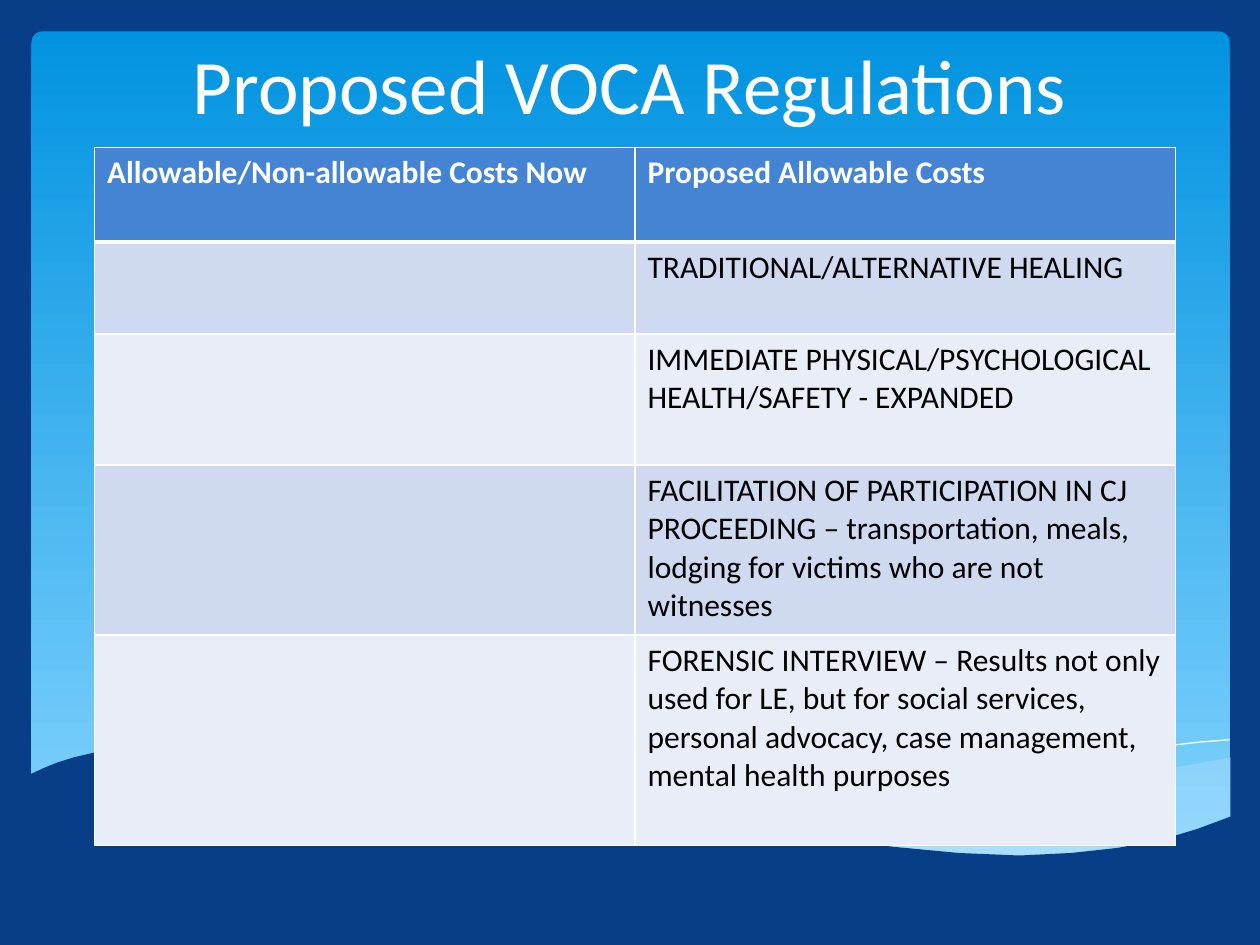
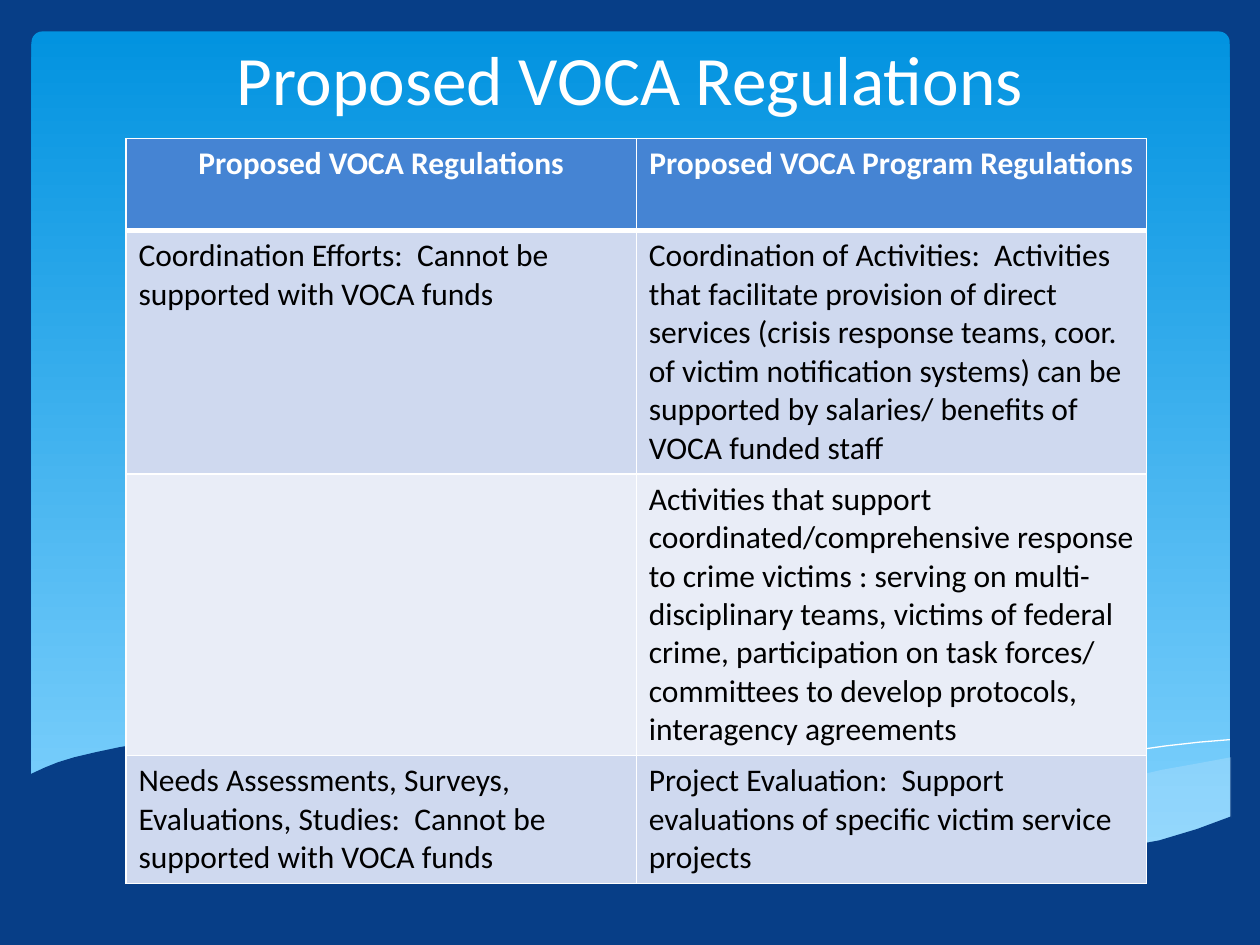
import pptx
import pptx.dml.color
import pptx.enum.shapes
import pptx.enum.text
import pptx.oxml
import pptx.oxml.ns
import pptx.util
from pptx.util import Inches

# Shared look
FONT = "Calibri"
NAVY, WHITE, BLACK = "073E87", "FFFFFF", "000000"
SKY_TOP, SKY_BOTTOM, MIST = "0293E0", "83D3FE", "C6E7FC"
HEADER_BLUE, BAND_DARK, BAND_LIGHT = "4584D3", "CFD9EF", "E9EDF7"
TITLE = "Proposed VOCA Regulations"

# Wave outlines, in inches
RIGHT_SWELL = [
    (9.77, 6.01), (9.5, 6.06), (9.22, 6.11), (8.92, 6.18), (8.62, 6.25),
    (8.06, 6.39), (7.54, 6.5), (7.07, 6.59), (6.62, 6.67), (6.92, 6.71),
    (7.33, 6.76), (7.7, 6.79), (8.04, 6.8), (8.36, 6.79), (8.64, 6.77),
    (8.9, 6.74), (9.14, 6.69), (9.37, 6.63), (9.64, 6.54), (9.77, 6.49)]
MIDDLE_SWELL = [
    (8.94, 6.75), (8.67, 6.71), (8.08, 6.62), (7.42, 6.49), (6.69, 6.33),
    (6.3, 6.24), (5.84, 6.13), (5.42, 6.04), (5.02, 5.98), (4.65, 5.93),
    (4.2, 5.89), (3.8, 5.87), (3.45, 5.88), (3.14, 5.9), (2.87, 5.93),
    (3.23, 5.98), (3.63, 6.04), (4.05, 6.13), (4.5, 6.24), (5.3, 6.42),
    (6.02, 6.57), (6.51, 6.66), (6.96, 6.72), (7.37, 6.77), (7.74, 6.79),
    (8.08, 6.8), (8.39, 6.8), (8.68, 6.78), (8.94, 6.75)]
FALLING_CREST = [
    (3.1, 5.97), (3.29, 5.94), (3.63, 5.9), (4.02, 5.89), (4.51, 5.89),
    (4.89, 5.92), (5.33, 5.96), (5.82, 6.02), (6.37, 6.1), (6.96, 6.21),
    (7.61, 6.35), (8.32, 6.52), (9.08, 6.73)]
RISING_CREST = [
    (6.14, 6.59), (6.53, 6.48), (6.96, 6.37), (7.49, 6.25), (8.07, 6.12),
    (8.67, 6), (8.97, 5.96), (9.25, 5.92), (9.52, 5.89), (9.76, 5.87)]
FOREGROUND_WAVE = [
    (9.77, 6.48), (9.5, 6.58), (9.2, 6.67), (8.87, 6.73), (8.5, 6.77),
    (8.09, 6.79), (7.61, 6.77), (7.08, 6.72), (6.48, 6.64), (5.79, 6.51),
    (5.03, 6.35), (4.47, 6.22), (3.91, 6.09), (3.4, 5.99), (2.92, 5.92),
    (2.5, 5.88), (2.11, 5.86), (1.77, 5.86), (1.46, 5.87), (1.19, 5.89),
    (0.95, 5.93), (0.76, 5.97), (0.59, 6.01), (0.46, 6.05), (0.36, 6.09),
    (0.23, 6.15), (0.23, 7.31), (9.77, 7.31)]

# Table contents, header row first
ALLOWABLE_COSTS = [
    ("Allowable/Non-allowable Costs Now", "Proposed Allowable Costs"),
    ("", "TRADITIONAL/ALTERNATIVE HEALING"),
    ("", "IMMEDIATE PHYSICAL/PSYCHOLOGICAL HEALTH/SAFETY - EXPANDED"),
    ("", "FACILITATION OF PARTICIPATION IN CJ PROCEEDING – transportation, "
         "meals, lodging for victims who are not witnesses"),
    ("", "FORENSIC INTERVIEW – Results not only used for LE, but for social "
         "services, personal advocacy, case management, mental health purposes"),
]
COORDINATION = [
    ("Proposed VOCA Regulations", "Proposed VOCA Program Regulations"),
    ("Coordination Efforts:  Cannot be supported with VOCA funds",
     "Coordination of Activities:  Activities that facilitate provision of "
     "direct services (crisis response teams, coor. of victim notification "
     "systems) can be supported by salaries/ benefits of VOCA funded staff"),
    ("", "Activities that support coordinated/comprehensive response to crime "
         "victims : serving on multi-disciplinary teams, victims of federal "
         "crime, participation on task forces/ committees to develop "
         "protocols, interagency agreements"),
    ("Needs Assessments, Surveys, Evaluations, Studies:  Cannot be supported "
     "with VOCA funds",
     "Project Evaluation:  Support evaluations of specific victim service "
     "projects"),
]


def color(hex_code):
    return pptx.dml.color.RGBColor.from_string(hex_code)


def style_text(paragraph, size, hex_code, bold=False, centered=False):
    align = pptx.enum.text.PP_ALIGN
    paragraph.alignment = align.CENTER if centered else align.LEFT
    paragraph.font.size = pptx.util.Pt(size)
    for run in paragraph.runs:
        run.font.name = FONT
        run.font.size = pptx.util.Pt(size)
        run.font.bold = bold
        run.font.color.rgb = color(hex_code)


def add_outline(shapes, points, closed):
    corners = [(Inches(x), Inches(y)) for x, y in points]
    builder = shapes.build_freeform(*corners[0])
    builder.add_line_segments(corners[1:], close=closed)
    outline = builder.convert_to_shape()
    outline.shadow.inherit = False
    return outline


def add_wave(shapes, points, hex_code, opacity=100):
    wave = add_outline(shapes, points, closed=True)
    wave.line.fill.background()
    wave.fill.solid()
    wave.fill.fore_color.rgb = color(hex_code)
    if opacity < 100:
        tint = wave.element.spPr.find(".//" + pptx.oxml.ns.qn("a:srgbClr"))
        tint.append(pptx.oxml.parse_xml(
            f'<a:alpha {pptx.oxml.ns.nsdecls("a")} val="{opacity * 1000}"/>'))
    return wave


def add_crest(shapes, points):
    crest = add_outline(shapes, points, closed=False)
    crest.fill.background()
    crest.line.color.rgb = color(WHITE)
    crest.line.width = pptx.util.Pt(0)
    return crest


def add_sky(shapes):
    sky = shapes.add_shape(pptx.enum.shapes.MSO_SHAPE.ROUNDED_RECTANGLE,
                           Inches(0.25), Inches(0.25), Inches(9.51), Inches(6.6))
    sky.adjustments[0] = 0.013
    sky.shadow.inherit = False
    sky.line.fill.background()
    sky.fill.gradient()
    sky.fill.gradient_angle = 270
    for stop, hex_code in zip(sky.fill.gradient_stops, (SKY_TOP, SKY_BOTTOM)):
        stop.color.rgb = color(hex_code)
    return sky


def add_backdrop(slide):
    """Draw the sky and waves, then hand them to the layout for every slide."""
    shapes = slide.shapes
    scenery = [
        add_sky(shapes),
        add_wave(shapes, RIGHT_SWELL, MIST, opacity=29),
        add_wave(shapes, MIDDLE_SWELL, MIST, opacity=40),
        add_crest(shapes, FALLING_CREST),
        add_crest(shapes, RISING_CREST),
        add_wave(shapes, FOREGROUND_WAVE, NAVY),
    ]
    layout_tree = slide.slide_layout.shapes.element
    for position, part in enumerate(scenery, start=2):
        layout_tree.insert(position, part.element)


def set_title(slide, left, top, width, height, size):
    title = slide.shapes.title
    title.left, title.top = Inches(left), Inches(top)
    title.width, title.height = Inches(width), Inches(height)
    frame = title.text_frame
    frame.text = TITLE
    frame.auto_size = pptx.enum.text.MSO_AUTO_SIZE.NONE
    frame.vertical_anchor = pptx.enum.text.MSO_ANCHOR.BOTTOM
    style_text(frame.paragraphs[0], size, WHITE, centered=True)


def set_borders(cell, top, bottom):
    """White cell borders; top and bottom widths are in points."""
    properties = cell._tc.get_or_add_tcPr()
    for side, width in (("L", 1), ("R", 1), ("T", top), ("B", bottom)):
        properties.append(pptx.oxml.parse_xml(
            f'<a:ln{side} {pptx.oxml.ns.nsdecls("a")} w="{width * 12700}">'
            f'<a:solidFill><a:srgbClr val="{WHITE}"/></a:solidFill>'
            f'</a:ln{side}>'))


def add_comparison(slide, rows, left, top, width, heights, centered_header):
    comparison = slide.shapes.add_table(
        len(rows), 2, Inches(left), Inches(top),
        Inches(width), Inches(sum(heights))).table
    for column in comparison.columns:
        column.width = Inches(width / 2)
    for r, (entries, height) in enumerate(zip(rows, heights)):
        comparison.rows[r].height = Inches(height)
        header = r == 0
        band = HEADER_BLUE if header else (BAND_LIGHT, BAND_DARK)[r % 2]
        for c, entry in enumerate(entries):
            cell = comparison.cell(r, c)
            set_borders(cell, top=3 if r == 1 else 1, bottom=3 if header else 1)
            cell.fill.solid()
            cell.fill.fore_color.rgb = color(band)
            cell.text_frame.text = entry
            style_text(cell.text_frame.paragraphs[0], 18,
                       WHITE if header else BLACK, bold=header,
                       centered=header and centered_header)


def main():
    deck = pptx.Presentation()
    deck.slide_width, deck.slide_height = Inches(10), Inches(7.5)
    backdrop = deck.slide_master.background.fill
    backdrop.solid()
    backdrop.fore_color.rgb = color(NAVY)
    title_only = deck.slide_layouts[5]

    # Costs allowed now and proposed
    costs = deck.slides.add_slide(title_only)
    add_backdrop(costs)
    set_title(costs, 0.5, 0.25, 9, 0.83, size=44)
    add_comparison(costs, ALLOWABLE_COSTS, 0.75, 1.17, 8.58,
                   [0.75, 0.73, 1.04, 1.35, 1.67], centered_header=False)

    # Coordination and evaluation
    coordination = deck.slides.add_slide(title_only)
    set_title(coordination, 0.75, 0.25, 8.5, 0.75, size=39.6)
    add_comparison(coordination, COORDINATION, 1, 1.1, 8.1,
                   [0.73, 1.93, 2.23, 1.01], centered_header=True)

    deck.save("out.pptx")


if __name__ == "__main__":
    main()
